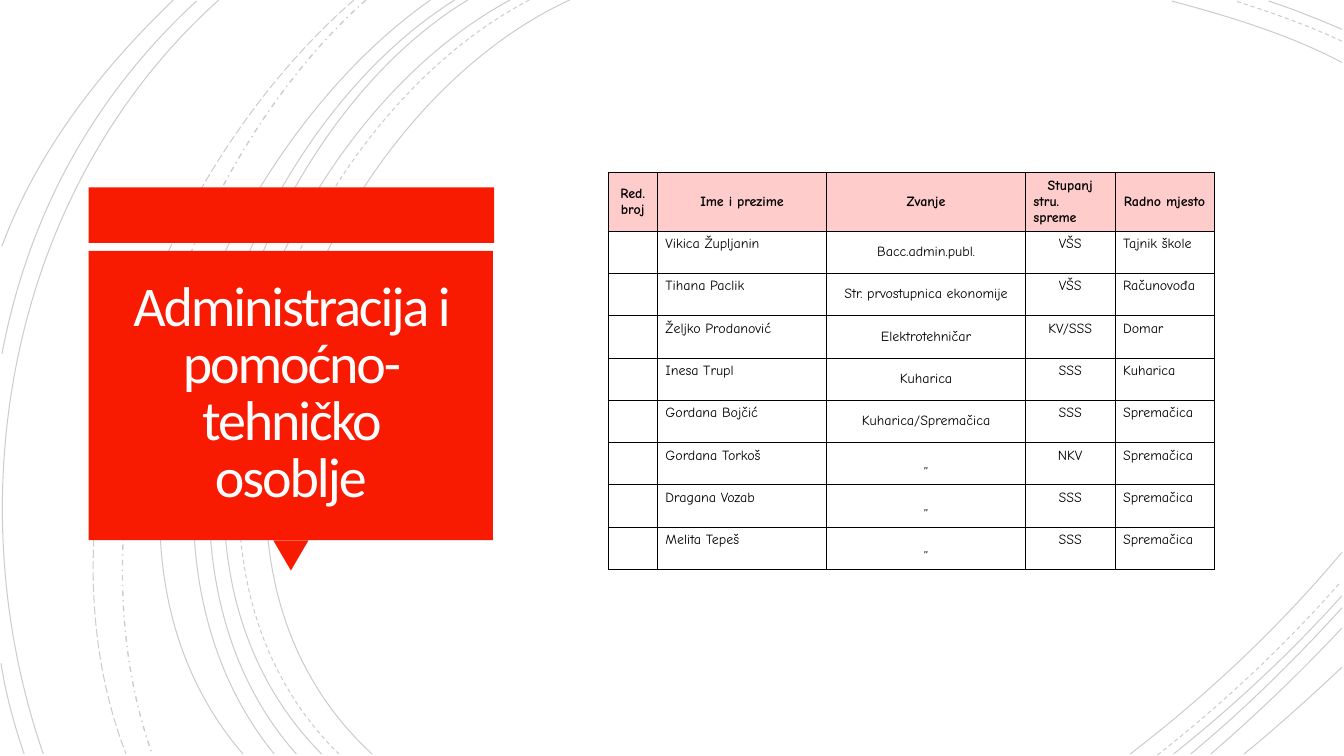
import dataclasses
import typing

import lxml.etree
import pptx
import pptx.dml.color
import pptx.enum.dml
import pptx.enum.shapes
import pptx.enum.text
import pptx.oxml.ns
import pptx.util

EMU_PER_PX = 9144
RED = "F81B02"
PINK = "FFCCCC"
BLACK = "000000"
TITLE_COLOUR = "FFFEFF"
ARC_OPACITY = 20000
BORDER_WIDTH = 6350

Align = pptx.enum.text.PP_ALIGN
Anchor = pptx.enum.text.MSO_ANCHOR
Dash = pptx.enum.dml.MSO_LINE
Preset = pptx.enum.shapes.MSO_SHAPE
Point = tuple[int, int]


@dataclasses.dataclass
class Arc:
    start: Point
    controls: tuple[Point, Point]
    end: Point
    dash: typing.Any = Dash.SOLID
    weight: float = 0.75


@dataclasses.dataclass
class Panel:
    preset: typing.Any
    left: int
    top: int
    width: int
    height: int
    rotation: int = 0


@dataclasses.dataclass
class Column:
    header: tuple[str, ...]
    width: int
    align: typing.Any = Align.LEFT
    anchor: typing.Any = Anchor.TOP


ARCS = [
    Arc((565, 0), ((315, 115), (143, 540)), (369, 748)),
    Arc((1331, 62), ((1278, 34), (1218, 16)), (1162, 1)),
    Arc((1121, 748), ((1197, 690), (1269, 622)), (1331, 548)),
    Arc((525, 0), ((285, 125), (123, 537)), (336, 748), Dash.DASH),
    Arc((1331, 41), ((1297, 25), (1260, 12)), (1225, 1), Dash.DASH),
    Arc((1148, 749), ((1213, 698), (1275, 640)), (1330, 577), Dash.DASH),
    Arc((506, 0), ((270, 127), (110, 537)), (319, 748)),
    Arc((1331, 29), ((1307, 19), (1283, 9)), (1258, 1)),
    Arc((1164, 748), ((1223, 701), (1280, 648)), (1331, 591)),
    Arc((464, 0), ((244, 133), (110, 541)), (294, 748)),
    Arc((1181, 748), ((1234, 704), (1284, 655)), (1331, 603)),
    Arc((451, 0), ((231, 138), (97, 533)), (272, 748)),
    Arc((1201, 748), ((1246, 709), (1290, 667)), (1331, 623)),
    Arc((427, 0), ((217, 147), (53, 529)), (241, 748)),
    Arc((1234, 748), ((1267, 721), (1299, 692)), (1331, 662)),
    Arc((363, 0), ((176, 166), (65, 509)), (151, 748), Dash.DASH_DOT, 1),
    Arc((351, 0), ((157, 169), (29, 499)), (125, 748), Dash.LONG_DASH),
    Arc((217, 0), ((11, 185), (-46, 490)), (43, 748)),
    Arc((195, 1), ((92, 96), (28, 214)), (2, 351)),
    Arc((1, 658), ((6, 689), (14, 719)), (24, 748)),
    Arc((172, 0), ((100, 69), (37, 150)), (2, 244)),
]

PANELS = [
    Panel(Preset.RECTANGLE, 88, 186, 402, 55),
    Panel(Preset.ISOSCELES_TRIANGLE, 271, 536, 35, 30, 180),
    Panel(Preset.RECTANGLE, 88, 249, 401, 287),
]

COLUMNS = [
    Column(("Red. broj",), 49),
    Column(("Ime i prezime",), 168, Align.JUSTIFY),
    Column(("Zvanje",), 197, Align.CENTER, Anchor.MIDDLE),
    Column(("Stupanj", "stru. spreme"), 89, Align.CENTER),
    Column(("Radno mjesto",), 98),
]

STAFF = [
    ("", "Vikica Župljanin", "Bacc.admin.publ.", "VŠS", "Tajnik škole"),
    ("", "Tihana Paclik", "Str. prvostupnica ekonomije", "VŠS", "Računovođa"),
    ("", "Željko Prodanović", "Elektrotehničar", "KV/SSS", "Domar"),
    ("", "Inesa Trupl", "Kuharica", "SSS", "Kuharica"),
    ("", "Gordana Bojčić", "Kuharica/Spremačica", "SSS", "Spremačica"),
    ("", "Gordana Torkoš", "„", "NKV", "Spremačica"),
    ("", "Dragana Vozab", "„", "SSS", "Spremačica"),
    ("", "Melita Tepeš", "„", "SSS", "Spremačica"),
]
HEADER_HEIGHT = 58
ROW_HEIGHT = 42


def px(length: int) -> pptx.util.Emu:
    return pptx.util.Emu(length * EMU_PER_PX)


def colour(value: str) -> pptx.dml.color.RGBColor:
    return pptx.dml.color.RGBColor.from_string(value)


def set_font(para, name: str, size: int, value: str, bold: bool = False) -> None:
    para.font.name = name
    para.font.size = pptx.util.Pt(size)
    para.font.bold = bold
    para.font.color.rgb = colour(value)


def draw_arc(page, arc: Arc) -> None:
    builder = page.shapes.build_freeform(*arc.start, scale=EMU_PER_PX)
    builder.add_line_segments([*arc.controls, arc.end], close=False)
    shape = builder.convert_to_shape()
    outline = shape.element.xpath(".//a:path")[0]
    curve = lxml.etree.SubElement(outline, pptx.oxml.ns.qn("a:cubicBezTo"))
    for segment in outline.findall(pptx.oxml.ns.qn("a:lnTo")):
        curve.append(segment[0])
        outline.remove(segment)
    shape.shadow.inherit = False
    shape.fill.background()
    shape.line.color.rgb = colour(BLACK)
    shape.line.width = pptx.util.Pt(arc.weight)
    shape.line.dash_style = arc.dash
    ink = shape.element.xpath(".//a:ln//a:srgbClr")[0]
    lxml.etree.SubElement(ink, pptx.oxml.ns.qn("a:alpha"), val=str(ARC_OPACITY))


def draw_panel(page, panel: Panel) -> None:
    shape = page.shapes.add_shape(
        panel.preset, px(panel.left), px(panel.top), px(panel.width), px(panel.height)
    )
    shape.rotation = panel.rotation
    shape.shadow.inherit = False
    shape.fill.solid()
    shape.fill.fore_color.rgb = colour(RED)
    shape.line.fill.background()


def write_title(page) -> None:
    title = page.shapes.title
    page.shapes.element.append(title.element)
    title.left, title.top, title.width, title.height = map(px, (97, 257, 383, 269))
    frame = title.text_frame
    frame.text = "Administracija i pomoćno-tehničko osoblje"
    frame.word_wrap = True
    frame.auto_size = pptx.enum.text.MSO_AUTO_SIZE.NONE
    frame.vertical_anchor = Anchor.MIDDLE
    frame.margin_left = frame.margin_right = px(25)
    frame.margin_top = frame.margin_bottom = px(25)
    para = frame.paragraphs[0]
    para.alignment = Align.CENTER
    para.line_spacing = 0.85
    set_font(para, "Calibri", 40, TITLE_COLOUR)
    title.element.xpath(".//a:defRPr")[0].set("spc", "-150")


def draw_borders(cell) -> None:
    properties = cell._tc.get_or_add_tcPr()
    for side in ("a:lnL", "a:lnR", "a:lnT", "a:lnB"):
        border = lxml.etree.SubElement(properties, pptx.oxml.ns.qn(side), w=str(BORDER_WIDTH))
        fill = lxml.etree.SubElement(border, pptx.oxml.ns.qn("a:solidFill"))
        lxml.etree.SubElement(fill, pptx.oxml.ns.qn("a:srgbClr"), val=BLACK)


def fill_cell(cell, lines: tuple[str, ...], column: Column, is_header: bool) -> None:
    draw_borders(cell)
    cell.margin_left = cell.margin_right = px(8)
    cell.margin_top = cell.margin_bottom = px(5)
    cell.vertical_anchor = Anchor.MIDDLE if is_header else column.anchor
    if is_header:
        cell.fill.solid()
        cell.fill.fore_color.rgb = colour(PINK)
    else:
        cell.fill.background()
    cell.text_frame.text = "\n".join(lines)
    for index, para in enumerate(cell.text_frame.paragraphs):
        header_align = Align.LEFT if index else Align.CENTER
        para.alignment = header_align if is_header else column.align
        set_font(para, "Comic Neue", 10, BLACK, is_header)


def draw_table(page) -> None:
    width = sum(column.width for column in COLUMNS)
    height = HEADER_HEIGHT + ROW_HEIGHT * len(STAFF)
    table = page.shapes.add_table(
        len(STAFF) + 1, len(COLUMNS), px(603), px(171), px(width), px(height)
    ).table
    table.first_row = table.horz_banding = False
    for row_index, row in enumerate(table.rows):
        row.height = px(ROW_HEIGHT if row_index else HEADER_HEIGHT)
    for index, column in enumerate(COLUMNS):
        table.columns[index].width = px(column.width)
        fill_cell(table.cell(0, index), column.header, column, True)
        for row_index, person in enumerate(STAFF, 1):
            fill_cell(table.cell(row_index, index), (person[index],), column, False)


def main() -> None:
    deck = pptx.Presentation()
    deck.slide_width, deck.slide_height = px(1333), px(750)
    page = deck.slides.add_slide(deck.slide_layouts[5])
    for arc in ARCS:
        draw_arc(page, arc)
    for panel in PANELS:
        draw_panel(page, panel)
    write_title(page)
    draw_table(page)
    deck.save("out.pptx")


if __name__ == "__main__":
    main()
